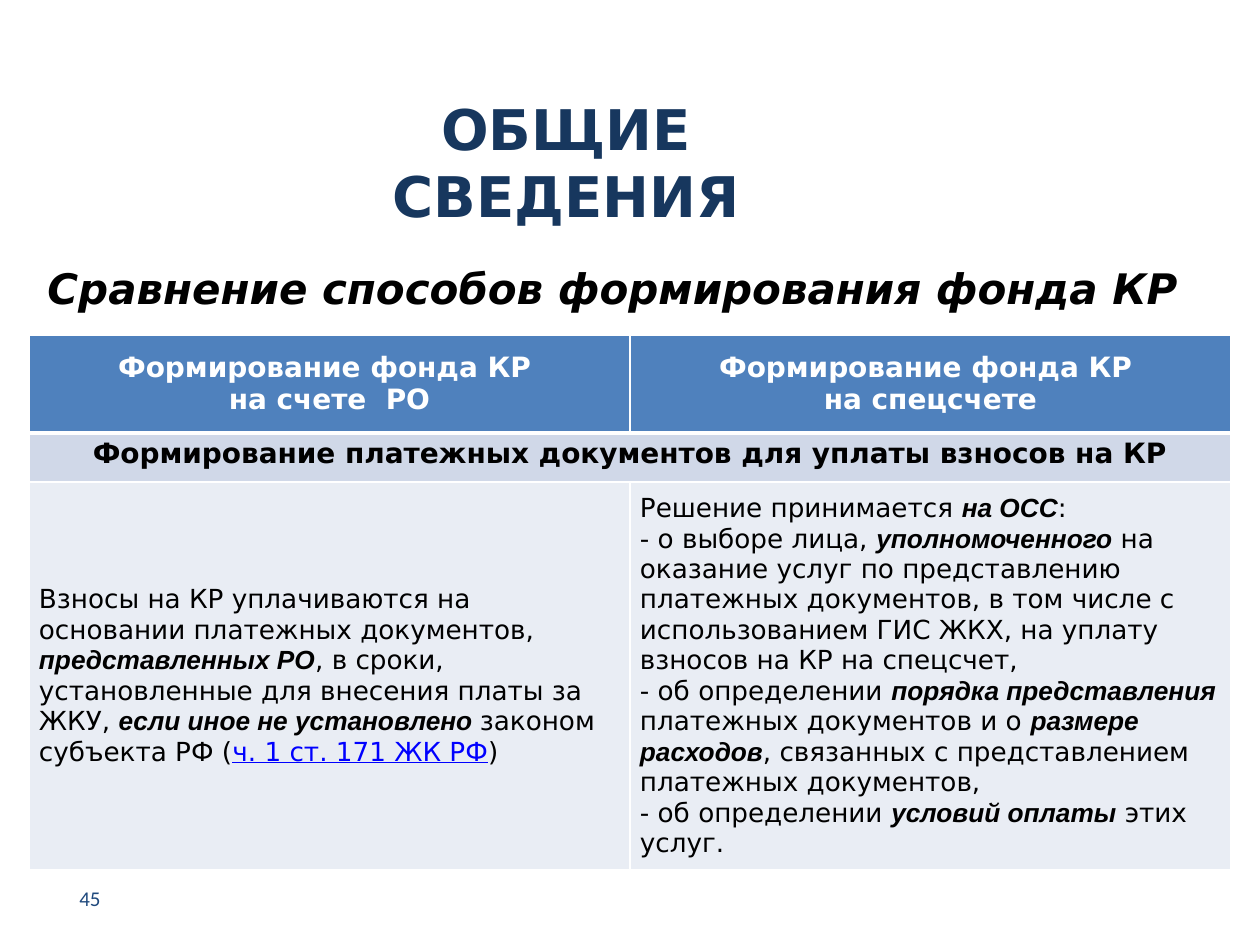
from dataclasses import dataclass
from typing import NamedTuple

from lxml.etree import SubElement as Sub
from pptx import Presentation
from pptx.dml.color import RGBColor as RGB
from pptx.enum.text import MSO_ANCHOR as Anchor, PP_ALIGN as Align
from pptx.oxml.ns import qn
from pptx.util import Emu, Pt

SCALE = 914400 / 126


@dataclass(frozen=True)
class Theme:
    sans: str = "DejaVu Sans"
    arial: str = "Arial"
    calib: str = "Calibri"
    navy: str = "17375E"
    blue: str = "1F497D"
    link: str = "0000FF"
    black: str = "000000"
    white: str = "FFFFFF"
    head: str = "4F81BD"
    band: str = "D0D8E8"
    pale: str = "E9EDF4"
    title: int = 32
    sub: int = 24
    top: int = 16
    body: int = 15
    page: int = 12


class Style(NamedTuple):
    color: str
    form: dict


class Run(NamedTuple):
    text: str
    style: Style


class Box(NamedTuple):
    area: tuple[int, int, int, int]
    run: Run
    align: Align
    anchor: Anchor


class Cell(NamedTuple):
    row: int
    col: int
    fill: str
    align: Align
    anchor: Anchor
    lines: list[list[Run]]


def px(num: int) -> Emu:
    return Emu(round(num * SCALE))


def style(color: str, name: str, size: int, **more: bool) -> Style:
    return Style(color, {"name": name, "size": Pt(size), **more})


def write(para, runs: list[Run], align: Align) -> None:
    para.alignment = align
    for item in runs:
        run = para.add_run()
        run.text = item.text
        for key, val in item.style.form.items():
            setattr(run.font, key, val)
        run.font.color.rgb = RGB.from_string(item.style.color)


def draw_box(slide, box: Box) -> None:
    frame = slide.shapes.add_textbox(*map(px, box.area)).text_frame
    frame.word_wrap = True
    frame.vertical_anchor = box.anchor
    write(frame.paragraphs[0], [box.run], box.align)


def edge(cell, side: str, width: int, color: str) -> None:
    props = cell._tc.get_or_add_tcPr()
    line = Sub(props, qn(f"a:ln{side}"), w=str(Pt(width)))
    Sub(Sub(line, qn("a:solidFill")), qn("a:srgbClr"), val=color)


def draw_cell(table, item: Cell) -> None:
    cell = table.cell(item.row, item.col)
    form = {
        "margin_left": px(10), "margin_right": px(10),
        "margin_top": px(5), "margin_bottom": px(5),
        "vertical_anchor": item.anchor,
    }
    for key, val in form.items():
        setattr(cell, key, val)
    for side in "LRTB":
        thick = (item.row, side) in ((0, "B"), (1, "T"))
        edge(cell, side, 3 if thick else 1, LOOK.white)
    cell.fill.solid()
    cell.fill.fore_color.rgb = RGB.from_string(item.fill)
    frame = cell.text_frame
    for num, runs in enumerate(item.lines):
        para = frame.add_paragraph() if num else frame.paragraphs[0]
        write(para, runs, item.align)


LOOK = Theme()
TITLE = style(LOOK.navy, LOOK.sans, LOOK.title, bold=True)
SUB = style(LOOK.black, LOOK.sans, LOOK.sub, bold=True, italic=True)
PAGE = style(LOOK.blue, LOOK.calib, LOOK.page)
HEAD = style(LOOK.white, LOOK.sans, LOOK.top, bold=True)
BAND = style(LOOK.black, LOOK.sans, LOOK.top, bold=True)
BODY = style(LOOK.black, LOOK.sans, LOOK.body, bold=False)
KEY = style(LOOK.black, LOOK.arial, LOOK.body, bold=True, italic=True)
LINK = style(LOOK.link, LOOK.sans, LOOK.body, bold=False, underline=True)

BOXES = [
    Box((305, 69, 522, 186), Run("ОБЩИЕ СВЕДЕНИЯ", TITLE), Align.CENTER, Anchor.MIDDLE),
    Box((35, 256, 1206, 630), Run("Сравнение способов формирования фонда КР", SUB),
        Align.LEFT, Anchor.TOP),
    Box((44, 873, 69, 50), Run("45", PAGE), Align.RIGHT, Anchor.MIDDLE),
]

FEES = [[
    Run("Взносы на КР уплачиваются на основании платежных документов, ", BODY),
    Run("представленных РО", KEY),
    Run(", в сроки, установленные для внесения платы за ЖКУ, ", BODY),
    Run("если иное не установлено ", KEY),
    Run("законом субъекта РФ (", BODY),
    Run("ч. 1 ст. 171 ЖК РФ", LINK),
    Run(")", BODY),
]]
VOTE = [
    [Run("Решение принимается ", BODY), Run("на ОСС", KEY), Run(":", BODY)],
    [Run("- о выборе лица, ", BODY), Run("уполномоченного", KEY),
     Run(" на оказание услуг по представлению платежных документов, в том числе "
         "с использованием ГИС ЖКХ, на уплату взносов на КР на спецсчет,", BODY)],
    [Run("- об определении ", BODY), Run("порядка представления ", KEY),
     Run("платежных документов и о ", BODY), Run("размере расходов", KEY),
     Run(", связанных с представлением платежных документов,", BODY)],
    [Run("- об определении ", BODY), Run("условий оплаты", KEY),
     Run(" этих услуг.", BODY)],
]
HEADS = ["на счете  РО", "на спецсчете"]
CELLS = [
    Cell(0, col, LOOK.head, Align.CENTER, Anchor.MIDDLE,
         [[Run("Формирование фонда КР ", HEAD)], [Run(text, HEAD)]])
    for col, text in enumerate(HEADS)
] + [
    Cell(1, 0, LOOK.band, Align.CENTER, Anchor.TOP,
         [[Run("Формирование платежных документов для уплаты взносов на КР", BAND)]]),
] + [
    Cell(2, col, LOOK.pale, Align.LEFT, Anchor.MIDDLE, lines)
    for col, lines in enumerate([FEES, VOTE])
]
ROWS = [98, 49, 335]


def draw_table(slide) -> None:
    area = map(px, (29, 335, 1202, sum(ROWS)))
    table = slide.shapes.add_table(len(ROWS), len(HEADS), *area).table
    for row, high in zip(table.rows, ROWS):
        row.height = px(high)
    table.cell(1, 0).merge(table.cell(1, 1))
    for item in CELLS:
        draw_cell(table, item)


def main() -> None:
    deck = Presentation()
    deck.slide_width, deck.slide_height = px(1260), px(945)
    slide = deck.slides.add_slide(deck.slide_layouts[6])
    for box in BOXES:
        draw_box(slide, box)
    draw_table(slide)
    deck.save("out.pptx")


if __name__ == "__main__":
    main()
